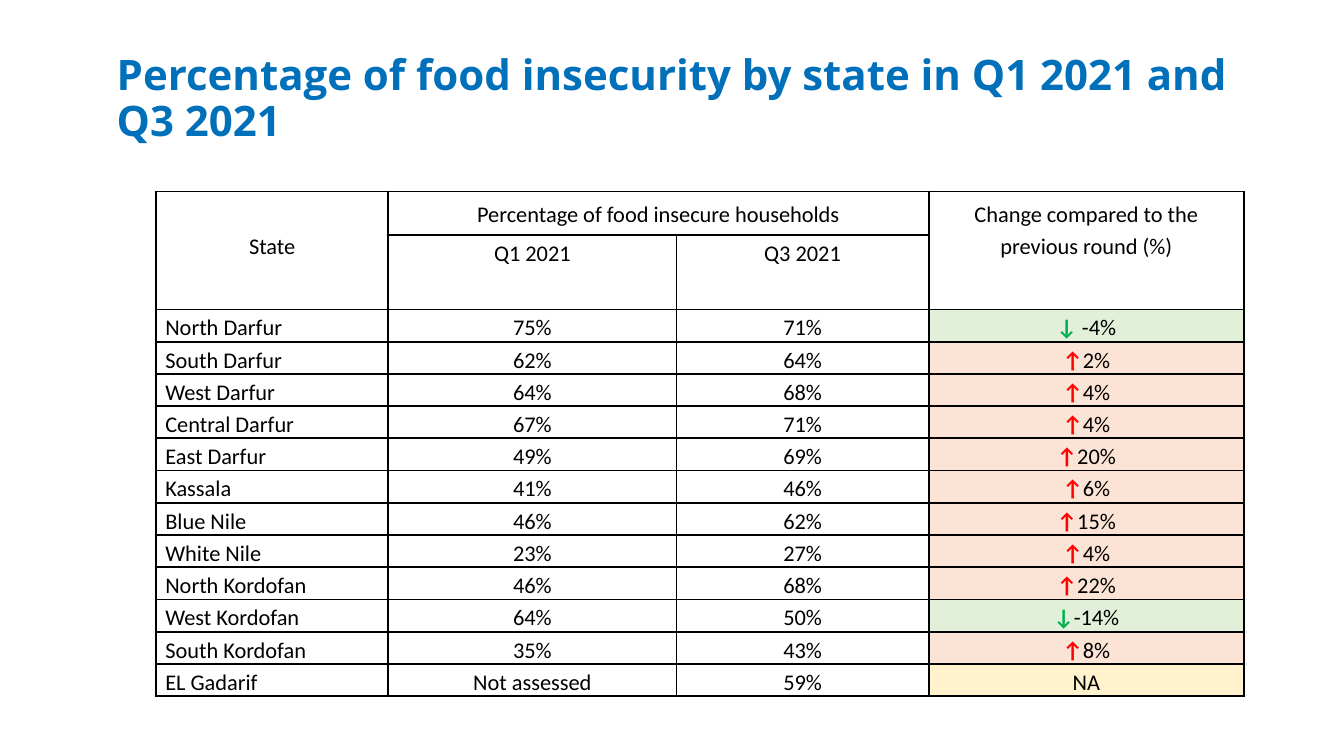
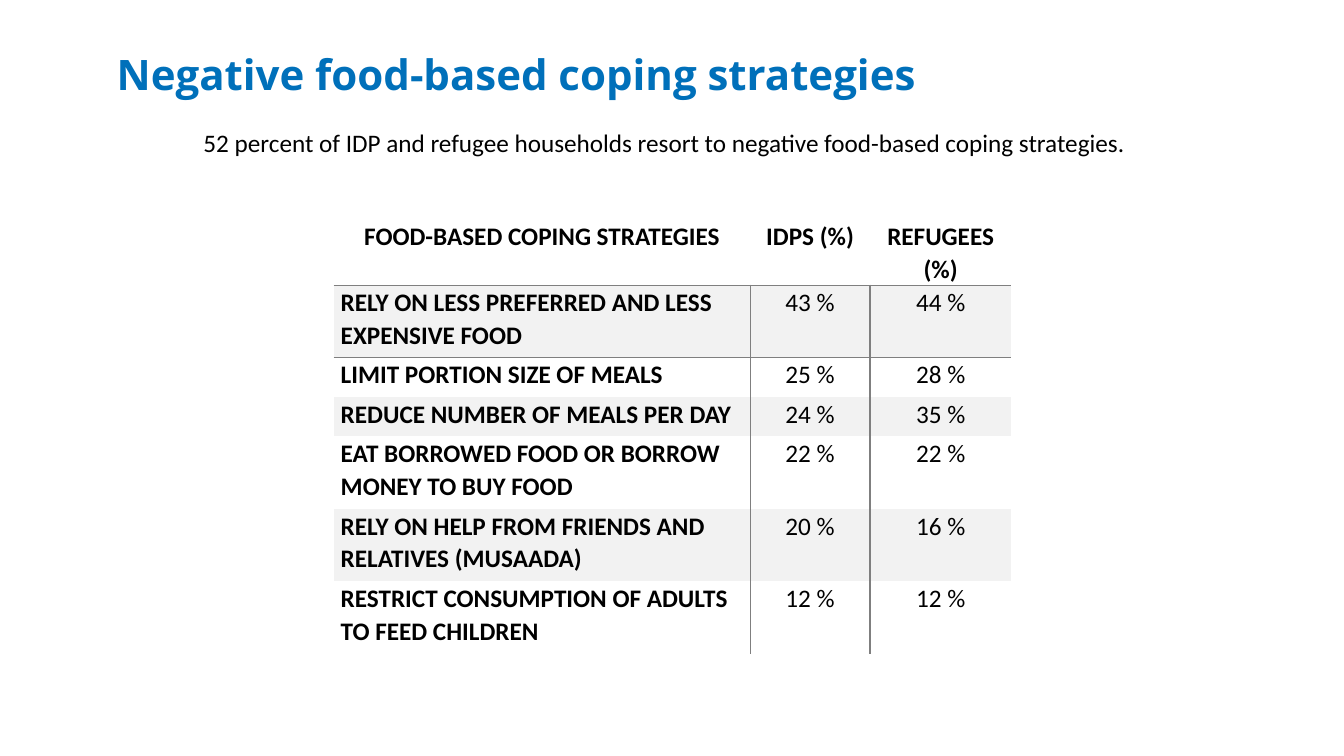
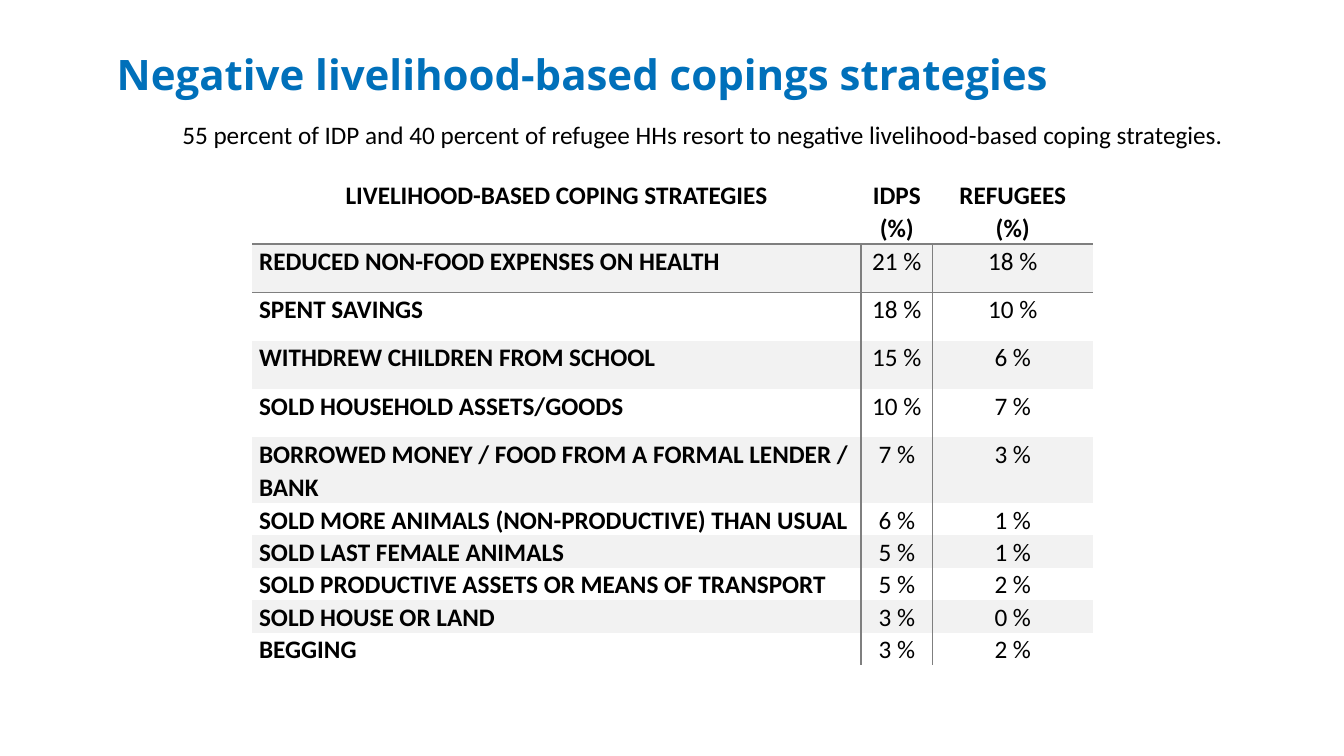
import pptx
import pptx.util
import pptx.dml.color
import pptx.enum.text
from lxml import etree

Inches, Pt = pptx.util.Inches, pptx.util.Pt
RGB = pptx.dml.color.RGBColor
ALIGN = pptx.enum.text.PP_ALIGN

# Shared look
BLUE = RGB(0x00, 0x70, 0xBA)
BLACK = RGB(0x00, 0x00, 0x00)
GRAY = RGB(0x7F, 0x7F, 0x7F)
BAND = RGB(0xF2, 0xF2, 0xF2)
GREEN = RGB(0x00, 0xB0, 0x50)
RED = RGB(0xFF, 0x00, 0x00)
MINT = RGB(0xE2, 0xEF, 0xD9)
PEACH = RGB(0xFB, 0xE4, 0xD5)
CREAM = RGB(0xFF, 0xF2, 0xCC)
HEAD, BODY = "Open Sans", "Calibri"
PLAIN = "{2D5ABB26-0587-4C30-8999-92F81FD0307C}"  # table style without grid
TONES = {"↓": (GREEN, MINT), "↑": (RED, PEACH)}
NS = "http://schemas.openxmlformats.org/drawingml/2006/main"

# Content
STATES = {
    "title": "Percentage of food insecurity by state in Q1 2021 and Q3 2021",
    "at": (1.55, 1.9),
    "cols": [2.3, 2.86, 2.5, 3.13],
    "head": ["State", "Percentage of food insecure households",
             "Change compared to the previous round (%)"],
    "rounds": ["Q1 2021", "Q3 2021"],
    "rows": [
        ("North Darfur", "75%", "71%", "↓ ", "-4%"),
        ("South Darfur", "62%", "64%", "↑", "2%"),
        ("West Darfur", "64%", "68%", "↑", "4%"),
        ("Central Darfur", "67%", "71%", "↑", "4%"),
        ("East Darfur", "49%", "69%", "↑", "20%"),
        ("Kassala", "41%", "46%", "↑", "6%"),
        ("Blue Nile", "46%", "62%", "↑", "15%"),
        ("White Nile", "23%", "27%", "↑", "4%"),
        ("North Kordofan", "46%", "68%", "↑", "22%"),
        ("West Kordofan", "64%", "50%", "↓", "-14%"),
        ("South Kordofan", "35%", "43%", "↑", "8%"),
        ("EL Gadarif", "Not assessed", "59%", "", "NA"),
    ],
}
COPING = [
    {
        "title": "Negative food-based coping strategies",
        "note": "52 percent of IDP and refugee households resort to "
                "negative food-based coping strategies.",
        "box": (1.92, 1.21, 9.5, 0.4),
        "at": (3.31, 2.18),
        "cols": [4.13, 1.19, 1.4],
        "highs": [0.65, 0.72, 0.39, 0.39, 0.72, 0.72, 0.72],
        "rows": [
            ("FOOD-BASED COPING STRATEGIES", "IDPS (%)", "REFUGEES (%)"),
            ("RELY ON LESS PREFERRED AND LESS EXPENSIVE FOOD", "43 %", "44 %"),
            ("LIMIT PORTION SIZE OF MEALS", "25 %", "28 %"),
            ("REDUCE NUMBER OF MEALS PER DAY", "24 %", "35 %"),
            ("EAT BORROWED FOOD OR BORROW MONEY TO BUY FOOD", "22 %", "22 %"),
            ("RELY ON HELP FROM FRIENDS AND RELATIVES (MUSAADA)", "20 %", "16 %"),
            ("RESTRICT CONSUMPTION OF ADULTS TO FEED CHILDREN", "12 %", "12 %"),
        ],
    },
    {
        "title": "Negative livelihood-based copings strategies",
        "note": "55 percent of IDP and 40 percent of refugee HHs resort to "
                "negative livelihood-based coping strategies.",
        "box": (1.71, 1.13, 10.55, 0.4),
        "at": (2.5, 1.77),
        "cols": [6.04, 0.71, 1.59],
        "highs": [0.65] + [0.48] * 4 + [0.65] + [0.32] * 5,
        "rows": [
            ("LIVELIHOOD-BASED COPING STRATEGIES", "IDPS (%)", "REFUGEES (%)"),
            ("REDUCED NON-FOOD EXPENSES ON HEALTH", "21 %", "18 %"),
            ("SPENT SAVINGS", "18 %", "10 %"),
            ("WITHDREW CHILDREN FROM SCHOOL", "15 %", "6 %"),
            ("SOLD HOUSEHOLD ASSETS/GOODS", "10 %", "7 %"),
            ("BORROWED MONEY / FOOD FROM A FORMAL LENDER / BANK", "7 %", "3 %"),
            ("SOLD MORE ANIMALS (NON-PRODUCTIVE) THAN USUAL", "6 %", "1 %"),
            ("SOLD LAST FEMALE ANIMALS", "5 %", "1 %"),
            ("SOLD PRODUCTIVE ASSETS OR MEANS OF TRANSPORT", "5 %", "2 %"),
            ("SOLD HOUSE OR LAND", "3 %", "0 %"),
            ("BEGGING", "3 %", "2 %"),
        ],
    },
]


def style(para, face, size, color, bold=False, align=ALIGN.LEFT, lead=1.0):
    para.alignment, para.line_spacing = align, lead
    font = para.font
    font.name, font.size, font.bold = face, Pt(size), bold
    font.color.rgb = color


def add_text(slide, box, text, *look, **more):
    frame = slide.shapes.add_textbox(*map(Inches, box)).text_frame
    frame.word_wrap = True
    frame.text = text
    style(frame.paragraphs[0], *look, **more)


def add_slide(deck, title):
    slide = deck.slides.add_slide(deck.slide_layouts[6])
    add_text(slide, (1.06, 0.49, 11.77, 1.28), title,
             HEAD, 30, BLUE, bold=True, lead=0.9)
    return slide


def add_grid(slide, spot, cols, highs):
    size = sum(cols), sum(highs)
    frame = slide.shapes.add_table(len(highs), len(cols),
                                   *map(Inches, spot + size))
    grid = frame.table
    grid.first_row = grid.horz_banding = False
    frame._element.find(f".//{{{NS}}}tableStyleId").text = PLAIN
    for col, wide in zip(grid.columns, cols):
        col.width = Inches(wide)
    for row, high in zip(grid.rows, highs):
        row.height = Inches(high)
    return grid


def add_edges(cell, sides, color, width):
    props = cell._tc.get_or_add_tcPr()
    for side in sides:
        line = etree.SubElement(props, f"{{{NS}}}ln{side}", w=str(Pt(width)))
        fill = etree.SubElement(line, f"{{{NS}}}solidFill")
        etree.SubElement(fill, f"{{{NS}}}srgbClr", val=str(color))


def paint(cell, fill):
    if fill is None:
        cell.fill.background()
    else:
        cell.fill.solid()
        cell.fill.fore_color.rgb = fill


def set_pad(cell, side, top, base):
    cell.margin_left = cell.margin_right = Inches(side)
    cell.margin_top, cell.margin_bottom = Inches(top), Inches(base)


def add_states(deck, data):
    slide = add_slide(deck, data["title"])
    state, share, change = data["head"]
    rows = [(state, share, "", "", change), ("", *data["rounds"], "", "")]
    rows += data["rows"]
    highs = [0.43, 0.74] + [0.32] * len(data["rows"])
    grid = add_grid(slide, data["at"], data["cols"], highs)
    for r, (*texts, arrow, value) in enumerate(rows):
        for c, text in enumerate(texts + [value]):
            cell = grid.cell(r, c)
            para = cell.text_frame.paragraphs[0]
            fill = None
            if c == 3 and r > 1:
                tone, fill = TONES.get(arrow.strip(), (BLACK, CREAM))
                if arrow:
                    mark = para.add_run()
                    mark.text = arrow
                    mark.font.bold, mark.font.color.rgb = True, tone
            if text:
                para.add_run().text = text
            side = ALIGN.JUSTIFY if c == 0 and r > 1 else ALIGN.CENTER
            style(para, BODY, 16, BLACK, align=side, lead=1.15)
            set_pad(cell, *((0.12, 0.06, 0.06) if r == 0 else (0.09, 0.01, 0)))
            add_edges(cell, "LRTB", BLACK, 1.5)
            paint(cell, fill)
    # Header spans; the state label sits one line lower
    grid.cell(0, 0).margin_top = Inches(0.37)
    for first, last in [((0, 0), (1, 0)), ((0, 1), (0, 2)), ((0, 3), (1, 3))]:
        grid.cell(*first).merge(grid.cell(*last))


def add_coping(deck, data):
    slide = add_slide(deck, data["title"])
    add_text(slide, data["box"], data["note"], BODY, 18, BLACK)
    grid = add_grid(slide, data["at"], data["cols"], data["highs"])
    for r, texts in enumerate(data["rows"]):
        for c, text in enumerate(texts):
            cell = grid.cell(r, c)
            cell.text = text
            style(cell.text_frame.paragraphs[0], BODY, 18, BLACK,
                  bold=r == 0 or c == 0, lead=1.07,
                  align=ALIGN.LEFT if r and c == 0 else ALIGN.CENTER)
            set_pad(cell, 0.07, 0, 0)
            # Rule under the header, rule right of the first column
            sides = {0: "R", 1: "L"}.get(c, "") if r else ""
            sides += {0: "B", 1: "T"}.get(r, "")
            add_edges(cell, sides, GRAY, 1)
            paint(cell, BAND if r % 2 else None)


def main():
    deck = pptx.Presentation()
    deck.slide_width, deck.slide_height = Inches(13.33), Inches(7.5)
    add_states(deck, STATES)
    for data in COPING:
        add_coping(deck, data)
    deck.save("out.pptx")


if __name__ == "__main__":
    main()
